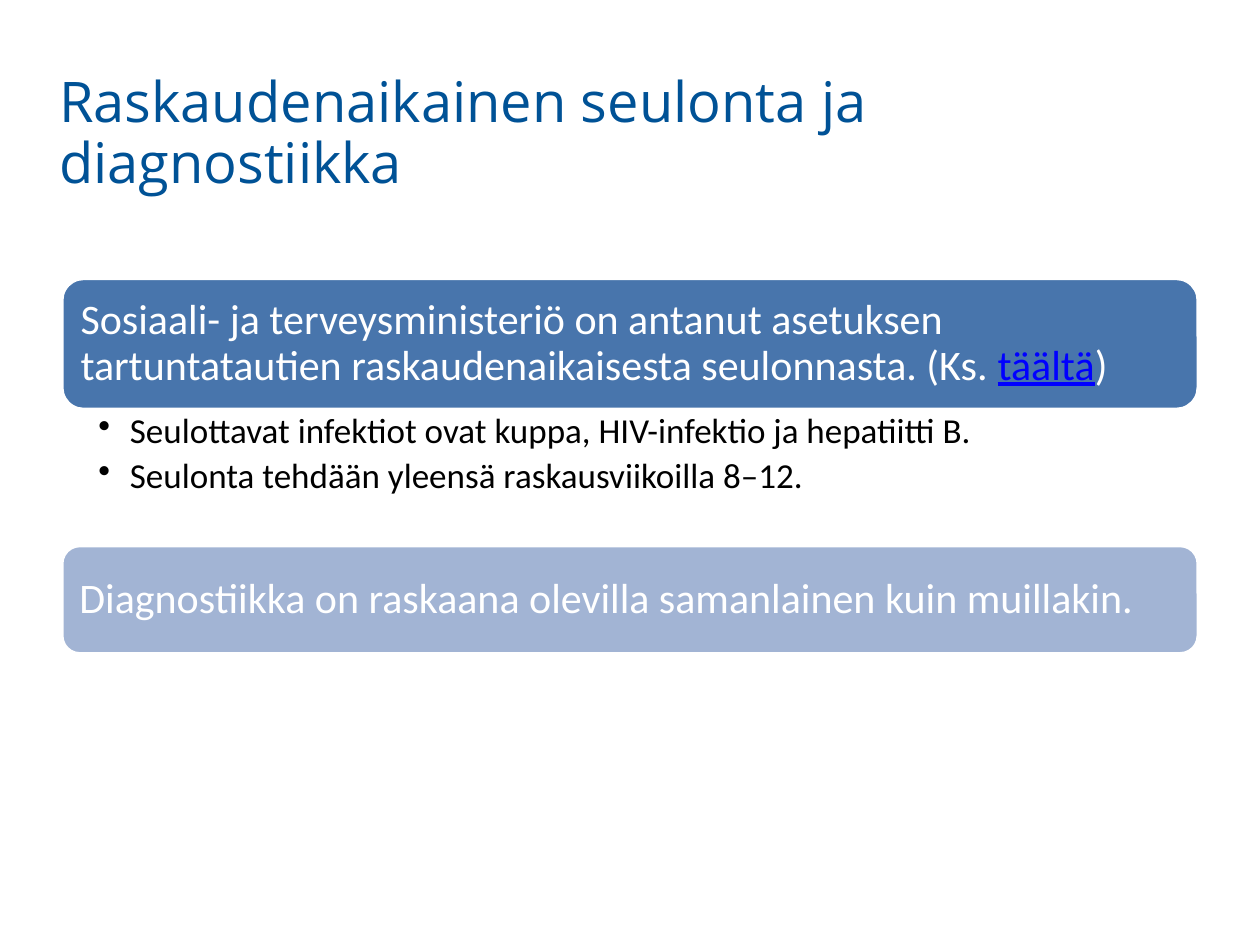
import pptx
import pptx.dml.color
import pptx.enum.shapes
import pptx.enum.text
import pptx.util
from lxml import etree
from pptx.util import Inches, Pt

COLORS = {
    "title": "005296",
    "strong": "4875AC",
    "soft": "A2B4D4",
    "white": "FFFFFF",
    "link": "0000FF",
    "body": "000000",
}
LEFT, WIDTH = 0.49, 9.02
LINE_SPACING = 0.9


def rgb(name):
    return pptx.dml.color.RGBColor.from_string(COLORS[name])


def set_frame(frame, margins, anchor):
    """Set wrapping, anchor and margins (left, top, right, bottom)."""
    frame.word_wrap = True
    frame.vertical_anchor = anchor
    (frame.margin_left, frame.margin_top,
     frame.margin_right, frame.margin_bottom) = map(Inches, margins)


def style_font(font, name, size, color):
    font.name = name
    font.size = Pt(size)
    font.color.rgb = rgb(color)


def add_title(slide, text):
    box = slide.shapes.add_textbox(
        Inches(0.37), Inches(0.44), Inches(9.02), Inches(1.26))
    set_frame(box.text_frame, (0.1, 0.05, 0.1, 0.05),
              pptx.enum.text.MSO_ANCHOR.MIDDLE)
    box.text_frame.text = text
    para = box.text_frame.paragraphs[0]
    para.line_spacing = LINE_SPACING
    style_font(para.runs[0].font, "Open Sans", 32, "title")


def add_banner(slide, top, height, fill, spans):
    """Add a rounded banner; spans are (text, colour) pairs."""
    banner = slide.shapes.add_shape(
        pptx.enum.shapes.MSO_SHAPE.ROUNDED_RECTANGLE,
        Inches(LEFT), Inches(top), Inches(WIDTH), Inches(height))
    banner.shadow.inherit = False
    banner.fill.solid()
    banner.fill.fore_color.rgb = rgb(fill)
    banner.line.color.rgb = rgb("white")
    banner.line.width = Pt(2)
    set_frame(banner.text_frame, (0.1, 0.1, 0.1, 0.1),
              pptx.enum.text.MSO_ANCHOR.MIDDLE)
    para = banner.text_frame.paragraphs[0]
    para.alignment = pptx.enum.text.PP_ALIGN.LEFT
    para.line_spacing = LINE_SPACING
    for text, color in spans:
        span = para.add_run()
        span.text = text
        style_font(span.font, "Calibri", 24, color)
        span.font.underline = color == "link"


def add_bullets(slide, top, height, items):
    box = slide.shapes.add_textbox(
        Inches(LEFT), Inches(top), Inches(WIDTH), Inches(height))
    frame = box.text_frame
    set_frame(frame, (0.29, 0.03, 0.16, 0.03), pptx.enum.text.MSO_ANCHOR.TOP)
    frame.text = "\n".join(items)
    for para in frame.paragraphs:
        para.line_spacing = LINE_SPACING
        para.space_after = Pt(4)
        properties = para._p.get_or_add_pPr()
        properties.set("lvl", "1")
        properties.set("marL", str(Inches(0.25)))
        properties.set("indent", str(-Inches(0.25)))
        bullet = etree.SubElement(properties, pptx.oxml.ns.qn("a:buChar"))
        bullet.set("char", "•")
        style_font(para.runs[0].font, "Calibri", 20, "body")


def main():
    deck = pptx.Presentation()
    deck.slide_width, deck.slide_height = Inches(10), Inches(7.5)
    slide = deck.slides.add_slide(deck.slide_layouts[6])

    # Title
    add_title(slide, "Raskaudenaikainen seulonta ja diagnostiikka")

    # Screening
    add_banner(slide, 2.21, 1.04, "strong", [
        ("Sosiaali- ja terveysministeriö on antanut asetuksen "
         "tartuntatautien raskaudenaikaisesta seulonnasta. (Ks. ", "white"),
        ("täältä", "link"),
        (")", "white"),
    ])
    add_bullets(slide, 3.25, 1.18, [
        "Seulottavat infektiot ovat kuppa, HIV-infektio ja hepatiitti B.",
        "Seulonta tehdään yleensä raskausviikoilla 8–12.",
    ])

    # Diagnostics
    add_banner(slide, 4.33, 0.86, "soft", [
        ("Diagnostiikka on raskaana olevilla samanlainen kuin muillakin.",
         "white"),
    ])

    deck.save("out.pptx")


if __name__ == "__main__":
    main()
